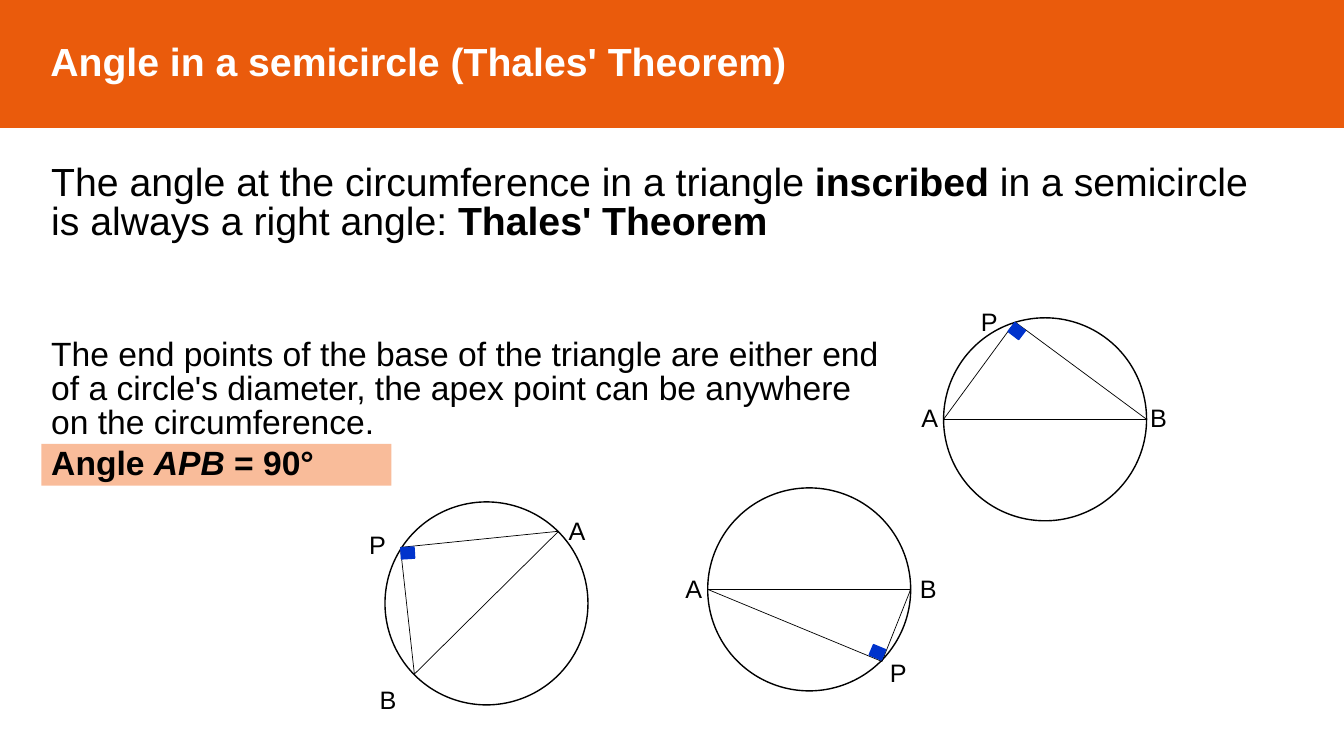
from lxml import etree
from pptx import Presentation
from pptx.dml.color import RGBColor
from pptx.enum import shapes as kinds, text as txt
from pptx.oxml import ns
from pptx.util import Pt

COLORS = {"band": "EA5B0C", "note": "F9BC9A", "mark": "0033CC",
          "ink": "000000", "paper": "FFFFFF"}
FONT = "Arial"
DIAM = 145
TIGHT = 0.84

# Circle corner; points from that corner; label corners on the slide; mark and its turn
FIGURES = [
    dict(at=(674, 227),
         points=dict(A=(0, 72.5), P=(51, 3), B=(145, 72.5)),
         labels=dict(A=(651, 284), P=(693.5, 215), B=(814.5, 284)),
         mark=(721.5, 232.5), turn=37.4),
    dict(at=(505.5, 348.5),
         points=dict(A=(0, 72.5), P=(124.5, 124), B=(145, 72.5)),
         labels=dict(A=(482.5, 406), P=(628.5, 466), B=(650, 406)),
         mark=(622, 462), turn=22.8),
    dict(at=(275, 358.5),
         points=dict(A=(124, 21), P=(11, 32.5), B=(21, 123)),
         labels=dict(A=(399, 364.5), P=(256.5, 374.5), B=(264, 485)),
         mark=(286.5, 391), turn=356.6),
]


def color(name):
    return RGBColor.from_string(COLORS[name])


def write(shape, runs, size=18, ink="ink", bold=False, space=1.0,
          anchor=txt.MSO_ANCHOR.TOP, left=7.2):
    """Fill a shape with one paragraph; each run is (words, style letters)."""
    frame = shape.text_frame
    frame.word_wrap = True
    frame.vertical_anchor = anchor
    frame.margin_left = Pt(left)
    para = frame.paragraphs[0]
    para.alignment = txt.PP_ALIGN.LEFT
    para.line_spacing = space
    for words, style in runs:
        run = para.add_run()
        run.text = words
        font = run.font
        font.name, font.size = FONT, Pt(size)
        font.bold = bold or "b" in style
        font.italic = "i" in style
        font.color.rgb = color(ink)


def add_text(parent, box, runs, **style):
    shape = parent.add_textbox(*map(Pt, box))
    write(shape, runs, **style)
    return shape


def add_block(parent, kind, box, fill, line=None):
    shape = parent.add_shape(kind, *map(Pt, box))
    shape.shadow.inherit = False
    shape.fill.solid()
    shape.fill.fore_color.rgb = color(fill)
    if line:
        shape.line.color.rgb = color(line)
        shape.line.width = Pt(1)
    else:
        shape.line.fill.background()
    return shape


def add_line(parent, start, end):
    line = parent.add_connector(kinds.MSO_CONNECTOR.STRAIGHT,
                                *map(Pt, start + end))
    line.line.color.rgb = color("ink")
    line.line.width = Pt(0.5)
    etree.SubElement(line._element.spPr, ns.qn("a:effectLst"))


def add_figure(parent, at, points, labels):
    """Draw a circle, its inscribed triangle and the three letters."""
    group = parent.add_group_shape().shapes
    add_block(group, kinds.MSO_SHAPE.OVAL, at + (DIAM, DIAM), "paper", "ink")
    ends = {key: (at[0] + x, at[1] + y) for key, (x, y) in points.items()}
    for first, last in ("AP", "PB", "AB"):
        add_line(group, ends[first], ends[last])
    for key, spot in labels.items():
        add_text(group, spot + (29.5, 29), [(key, "")])


def main():
    deck = Presentation()
    deck.slide_width, deck.slide_height = Pt(960), Pt(540)
    items = deck.slides.add_slide(deck.slide_layouts[6]).shapes
    rect = kinds.MSO_SHAPE.RECTANGLE

    # Title band
    band = add_block(items, rect, (0, -4, 960, 95), "band", "band")
    write(band, [("Angle in a semicircle (Thales' Theorem)", "")],
          size=28, ink="paper", bold=True,
          anchor=txt.MSO_ANCHOR.MIDDLE, left=36)

    # Theorem and explanation
    add_text(items, (29.5, 114, 877, 78), [
        ("The angle at the circumference in a triangle ", ""),
        ("inscribed", "b"),
        (" in a semicircle is always a right angle:", ""),
        (" Thales' Theorem", "b")], size=28, space=TIGHT)
    add_text(items, (29.5, 239, 616, 80), [
        ("The end points of the base of the triangle are either end of a "
         "circle's diameter, the apex point can be anywhere on the "
         "circumference.", "")], size=24, space=TIGHT)

    # Result
    note = add_block(items, rect, (29.5, 317, 250, 30), "note")
    write(note, [("Angle ", ""), ("APB ", "i"), ("= 90°", "")],
          size=24, bold=True, space=TIGHT)

    # Circles, then right-angle marks on top
    for fig in FIGURES:
        add_figure(items, fig["at"], fig["points"], fig["labels"])
    for fig in FIGURES:
        mark = add_block(items, rect, fig["mark"] + (9.5, 8), "mark", "mark")
        mark.rotation = fig["turn"]

    deck.save("out.pptx")


if __name__ == "__main__":
    main()
